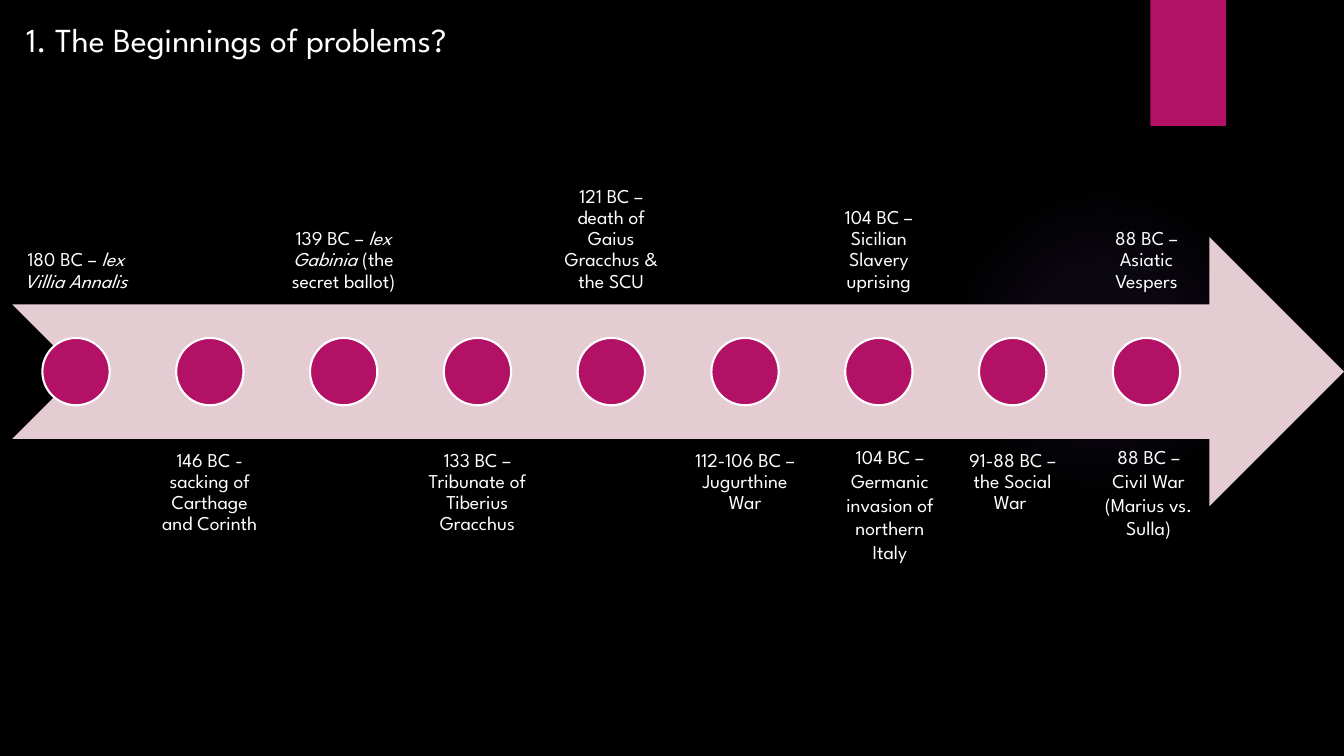
"""Build a timeline slide of the early crises of the Roman Republic."""
import collections

import lxml.etree
import pptx
import pptx.dml.color
import pptx.enum.shapes
import pptx.enum.text
import pptx.oxml
import pptx.oxml.ns
import pptx.util

Pt = pptx.util.Pt
RGB = pptx.dml.color.RGBColor.from_string
SHAPE = pptx.enum.shapes.MSO_SHAPE
ALIGN = pptx.enum.text.PP_ALIGN
ANCHOR = pptx.enum.text.MSO_ANCHOR

Theme = collections.namedtuple(
    "Theme", "font background ink accent band glow title_size label_size")
theme = Theme("League Spartan", "000000", "FFFFFF", "B31166", "E5CCD3", "9B6BF2",
              Pt(24), Pt(14))

deck = pptx.Presentation()
deck.slide_width, deck.slide_height = Pt(960), Pt(540)
slide = deck.slides.add_slide(deck.slide_layouts[5])
slide.background.fill.solid()
slide.background.fill.fore_color.rgb = RGB(theme.background)


def add_figure(kind, left, top, width, height, color):
    figure = slide.shapes.add_shape(kind, Pt(left), Pt(top), Pt(width), Pt(height))
    figure.shadow.inherit = False
    figure.fill.solid()
    figure.fill.fore_color.rgb = RGB(color)
    figure.line.fill.background()
    return figure


def write(frame, runs, size, align, anchor, inset_x=7.2, inset_y=3.6, spacing=1.0):
    frame.word_wrap = True
    frame.auto_size = pptx.enum.text.MSO_AUTO_SIZE.NONE
    frame.vertical_anchor = anchor
    frame.margin_left = frame.margin_right = Pt(inset_x)
    frame.margin_top = frame.margin_bottom = Pt(inset_y)
    paragraph = frame.paragraphs[0]
    paragraph.alignment = align
    paragraph.line_spacing = spacing
    for words, italic in runs:
        run = paragraph.add_run()
        run.text = words
        run.font.name = theme.font
        run.font.size = size
        run.font.italic = italic
        run.font.color.rgb = RGB(theme.ink)


glow = add_figure(SHAPE.OVAL, 677.5, 131.8, 221.8, 221.8, theme.glow)
stops = "".join(
    f'<a:gs pos="{position}000"><a:srgbClr val="{theme.glow}">'
    f'<a:alpha val="{alpha}000"/></a:srgbClr></a:gs>'
    for position, alpha in [(0, 7), (36, 6), (69, 0)])
gradient = pptx.oxml.parse_xml(
    f'<a:gradFill {pptx.oxml.ns.nsdecls("a")}><a:gsLst>{stops}</a:gsLst>'
    '<a:path path="circle"><a:fillToRect l="50000" t="50000" r="50000" b="50000"/>'
    '</a:path></a:gradFill>')
solid = glow.element.spPr.find(pptx.oxml.ns.qn("a:solidFill"))
solid.getparent().replace(solid, gradient)

add_figure(SHAPE.RECTANGLE, 821.8, 0, 54, 90, theme.accent)
add_figure(SHAPE.NOTCHED_RIGHT_ARROW, 8.7, 169.3, 951.3, 192.3, theme.band)

events = [
    [("180 BC – ", False), ("lex Villia Annalis", True)],
    [("146 BC - sacking of Carthage and Corinth", False)],
    [("139 BC – ", False), ("lex Gabinia ", True), ("(the secret ballot)", False)],
    [("133 BC – Tribunate of Tiberius Gracchus", False)],
    [("121 BC – death of Gaius Gracchus & the SCU", False)],
    [("112-106 BC – Jugurthine War", False)],
    [("104 BC – Sicilian Slavery uprising", False)],
    [("91-88 BC – the Social War ", False)],
    [("88 BC – Asiatic Vespers", False)],
]
first_center, pitch = 54.3, 95.58
dot_size, label_width, label_height = 48.1, 91, 192.3
for index, event in enumerate(events):
    center = first_center + index * pitch
    above = index % 2 == 0
    label = slide.shapes.add_textbox(
        Pt(center - label_width / 2), Pt(24.5 if above else 313.7),
        Pt(label_width), Pt(label_height))
    write(label.text_frame, event, theme.label_size, ALIGN.CENTER,
          ANCHOR.BOTTOM if above else ANCHOR.TOP, 7.9, 7.9, 0.9)
    dot = add_figure(SHAPE.OVAL, center - dot_size / 2, 241.4,
                     dot_size, dot_size, theme.accent)
    dot.line.color.rgb = RGB(theme.ink)
    dot.line.width = Pt(1.5)

extra_events = [
    (591.8, 87.8, 108.7, "104 BC – Germanic invasion of northern Italy"),
    (780.5, 79.9, 92.2, "88 BC – Civil War (Marius vs. Sulla)"),
]
for left, width, height, event in extra_events:
    label = slide.shapes.add_textbox(Pt(left), Pt(314.6), Pt(width), Pt(height))
    write(label.text_frame, [(event, False)], theme.label_size, ALIGN.CENTER, ANCHOR.TOP)

heading = slide.shapes.title
heading.left, heading.top, heading.width, heading.height = Pt(11.5), Pt(10), Pt(668), Pt(36)
write(heading.text_frame, [("1. The Beginnings of problems?", False)],
      theme.title_size, ALIGN.LEFT, ANCHOR.TOP)

deck.save("out.pptx")
